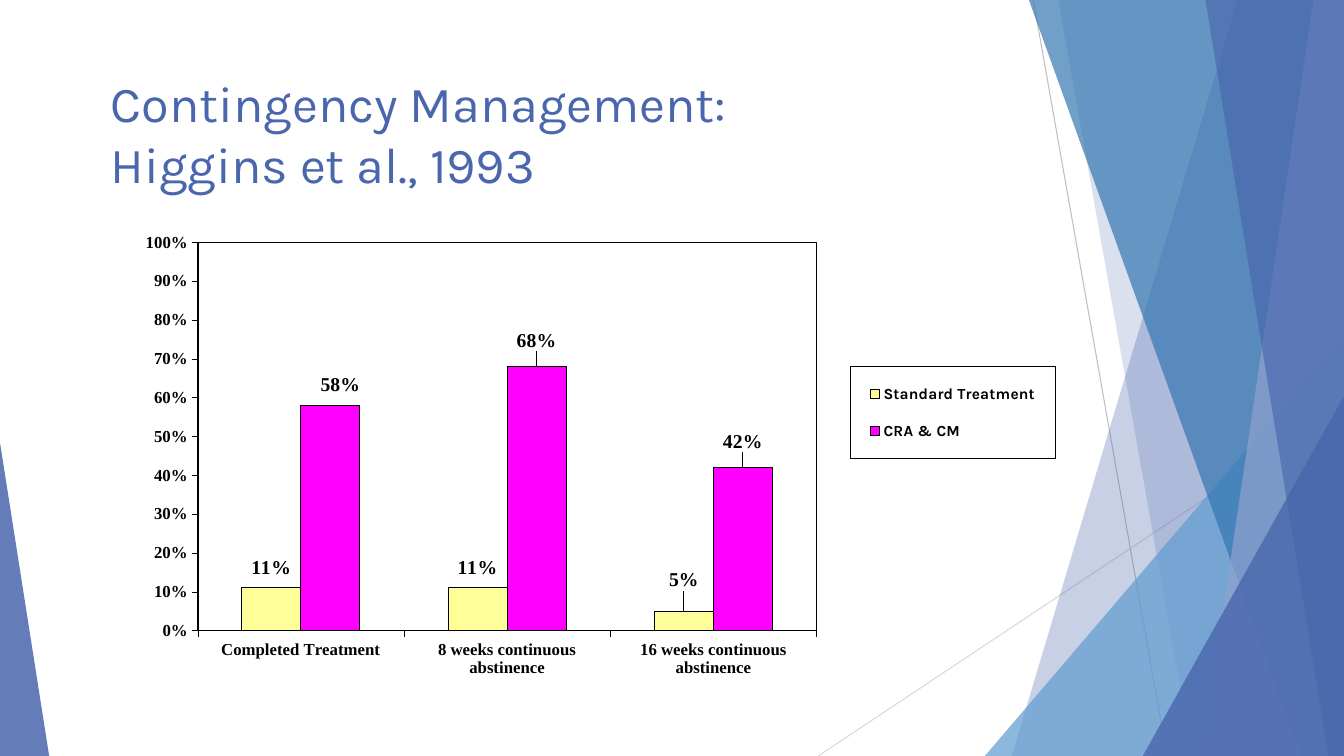
from lxml.etree import SubElement
from pptx import Presentation
from pptx.chart.data import CategoryChartData
from pptx.dml.color import RGBColor
from pptx.enum.chart import XL_CHART_TYPE, XL_LABEL_POSITION, XL_LEGEND_POSITION, XL_TICK_MARK
from pptx.enum.shapes import MSO_CONNECTOR, MSO_SHAPE
from pptx.enum.text import MSO_ANCHOR
from pptx.oxml import parse_xml
from pptx.oxml.ns import nsdecls, qn
from pptx.util import Cm, Pt

W, H = 33.87, 19.05
COLORS = {"blue": "4A66AC", "sky": "629DD1", "deep": "3477B2", "pale": "90A2CF",
          "gray": "BFBFBF", "light": "D9D9D9", "black": "000000",
          "yellow": "FFFF99", "magenta": "FF00FF"}
TITLE = "Contingency Management:\vHiggins et al., 1993"
RAYS = [(26.04, 0, 29.41, H, "gray"), (W, 10.24, 20.62, H, "light")]
FACETS = [
    ("band", 31.19, 25.5, "blue", 30),
    ("band", 26.67, 30.05, "blue", 20),
    ("triangle", (24.82, 8.46, W - 24.82), 1, "sky", 72),
    ("band", 25.93, 32.79, "deep", 70),
    ("band", 33.1, 30.28, "pale", 70),
    ("band", 30.38, 33.48, "blue", 65),
    ("triangle", (28.8, 9.98, W - 28.8), 1, "blue", 80),
    ("triangle", (0, 11.15, 1.24), 0, "blue", 85),
]
CATEGORIES = ["Completed Treatment", "8 weeks continuous abstinence",
              "16 weeks continuous abstinence"]
SERIES = [
    ("Standard Treatment", (0.11, 0.11, 0.05), "yellow",
     [(0, -0.01), (0, -0.01), (0, -0.03)]),
    ("CRA & CM", (0.58, 0.68, 0.42), "magenta",
     [(0.01, -0.01), (0, -0.02), (0, -0.02)]),
]


def rgb(name):
    return RGBColor.from_string(COLORS[name])


def set_font(font, size=12, color="black", name="Times New Roman", bold=True):
    font.size, font.name, font.bold = Pt(size), name, bold
    font.color.rgb = rgb(color)


def add_text(s, text, box, **fmt):
    tf = s.shapes.add_textbox(*map(Cm, box)).text_frame
    tf.word_wrap = True
    tf.vertical_anchor = MSO_ANCHOR.TOP
    p = tf.paragraphs[0]
    p.text = text
    for r in p.runs:
        set_font(r.font, **fmt)


def add_ray(s, x1, y1, x2, y2, color):
    ln = s.shapes.add_connector(MSO_CONNECTOR.STRAIGHT, Cm(x1), Cm(y1), Cm(x2), Cm(y2))
    ln.line.color.rgb = rgb(color)
    ln.line.width = Pt(0.75)
    SubElement(ln.element.spPr, qn("a:effectLst"))


def add_facet(s, kind, a, b, color, opacity):
    if kind == "band":
        fb = s.shapes.build_freeform(Cm(a), 0)
        fb.add_line_segments([(Cm(W), 0), (Cm(W), Cm(H)), (Cm(b), Cm(H))], close=True)
        sp = fb.convert_to_shape()
    else:
        x, y, w = a
        sp = s.shapes.add_shape(MSO_SHAPE.ISOSCELES_TRIANGLE, Cm(x), Cm(y), Cm(w), Cm(H - y))
        sp.adjustments[0] = b
    sp.shadow.inherit = False
    sp.line.fill.background()
    sp.fill.solid()
    sp.fill.fore_color.rgb = rgb(color)
    clr = sp.element.spPr.find(f"{qn('a:solidFill')}/{qn('a:srgbClr')}")
    SubElement(clr, qn("a:alpha"), val=str(opacity * 1000))


def layout(**items):
    tags = "".join(f'<c:{k} val="{v}"/>' for k, v in items.items())
    return parse_xml(f'<c:layout {nsdecls("c")}><c:manualLayout>{tags}'
                     '</c:manualLayout></c:layout>')


def frame_layout(x, y, w, h, **target):
    return layout(**target, xMode="edge", yMode="edge", x=x, y=y, w=w, h=h)


def outline():
    return parse_xml(f'<c:spPr {nsdecls("c", "a")}><a:noFill/><a:ln w="9525"><a:solidFill>'
                     f'<a:srgbClr val="{COLORS["black"]}"/></a:solidFill></a:ln></c:spPr>')


def drop_layout(el):
    old = el.find(qn("c:layout"))
    if old is not None:
        el.remove(old)


def style_axis(axis):
    axis.has_major_gridlines = False
    axis.major_tick_mark = XL_TICK_MARK.OUTSIDE
    axis.minor_tick_mark = XL_TICK_MARK.NONE
    axis.format.line.color.rgb = rgb("black")
    axis.format.line.width = Pt(0.17)
    set_font(axis.tick_labels.font)


def style_series(ser, color, shifts):
    ser.format.fill.solid()
    ser.format.fill.fore_color.rgb = rgb(color)
    ser.format.line.color.rgb = rgb("black")
    ser.format.line.width = Pt(0.67)
    labels = ser.data_labels
    labels.show_value = True
    labels.number_format, labels.number_format_is_linked = "0%", False
    labels.position = XL_LABEL_POSITION.OUTSIDE_END
    set_font(labels.font, size=14)
    for i in range(len(shifts)):
        label = ser.points[i].data_label
        set_font(label.font, size=14)
        label.position = XL_LABEL_POSITION.OUTSIDE_END
    for el, (dx, dy) in zip(ser._element.iter(qn("c:dLbl")), shifts):
        drop_layout(el)
        el.find(qn("c:idx")).addnext(layout(x=dx, y=dy))


def add_results(s, box):
    data = CategoryChartData(number_format="0%")
    data.categories = CATEGORIES
    for name, vals, *_ in SERIES:
        data.add_series(name, vals)
    chart = s.shapes.add_chart(XL_CHART_TYPE.COLUMN_CLUSTERED, *map(Cm, box), data).chart
    chart.has_title = False
    set_font(chart.font)
    plot = chart.plots[0]
    plot.gap_width, plot.overlap, plot.vary_by_categories = 150, 0, False
    for ser, (_, _, color, shifts) in zip(plot.series, SERIES):
        style_series(ser, color, shifts)

    style_axis(chart.category_axis)
    val = chart.value_axis
    style_axis(val)
    val.minimum_scale, val.maximum_scale, val.major_unit = 0, 1, 0.1
    val.tick_labels.number_format = "0%"
    val.tick_labels.number_format_is_linked = False

    area = chart.element.find(f".//{qn('c:plotArea')}")
    drop_layout(area)
    area.insert(0, frame_layout(0.095, 0.066, 0.607, 0.72, layoutTarget="inner"))
    area.append(outline())

    chart.has_legend = True
    chart.legend.position = XL_LEGEND_POSITION.RIGHT
    chart.legend.include_in_layout = False
    set_font(chart.legend.font, size=11, name="Karla")
    legend = chart.element.find(f".//{qn('c:legend')}")
    drop_layout(legend)
    legend.find(qn("c:legendPos")).addnext(frame_layout(0.735, 0.297, 0.201, 0.169))
    legend.find(qn("c:overlay")).addnext(outline())


def main():
    prs = Presentation()
    prs.slide_width, prs.slide_height = Cm(W), Cm(H)
    s = prs.slides.add_slide(prs.slide_layouts[6])
    for ray in RAYS:
        add_ray(s, *ray)
    for facet in FACETS:
        add_facet(s, *facet)
    add_text(s, TITLE, (2.54, 1.7, 28.78, 3.18),
             size=36, color="blue", name="Karla", bold=False)
    add_results(s, (2.54, 5.21, 25.7, 13.59))
    prs.save("out.pptx")


if __name__ == "__main__":
    main()
